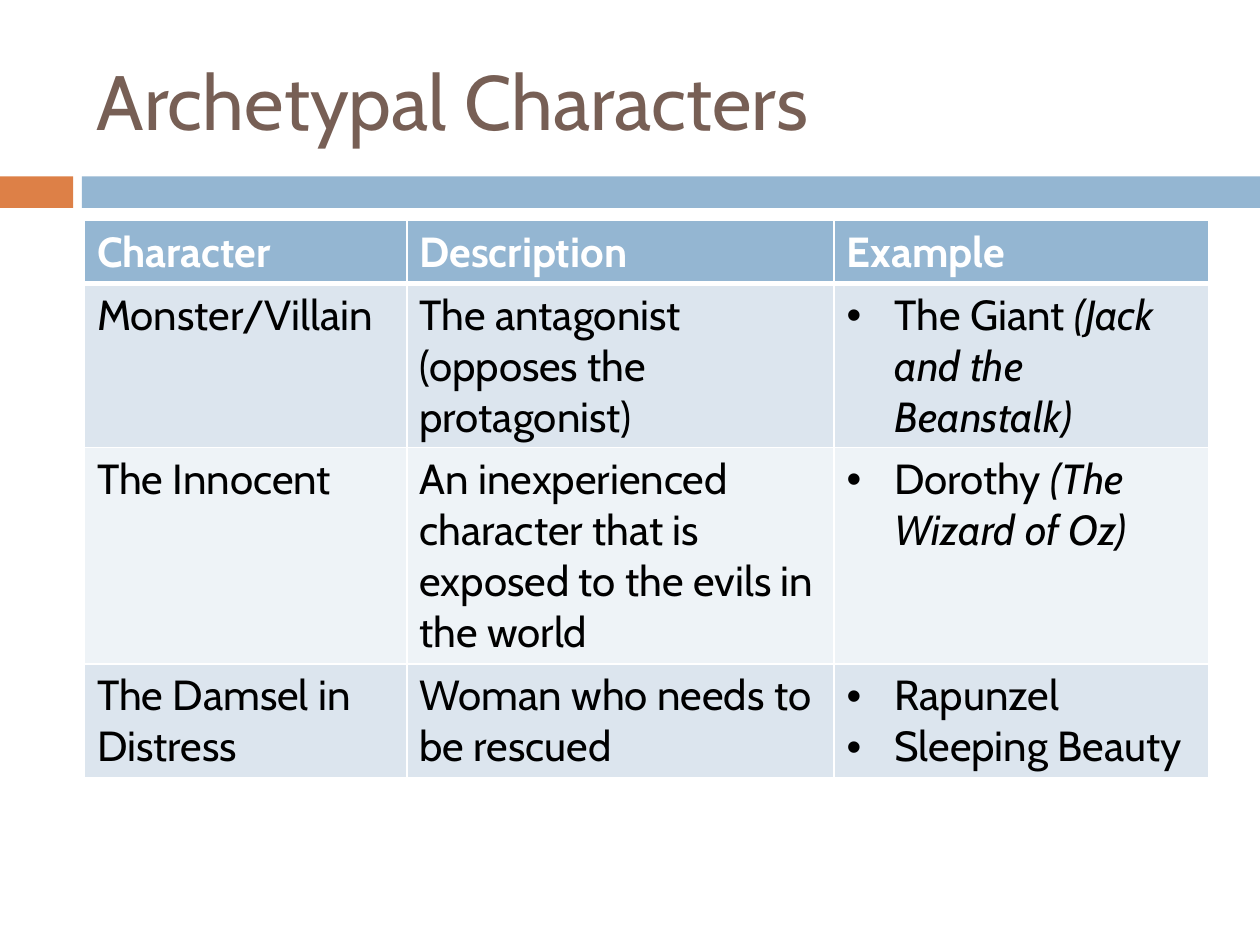
import pptx
import pptx.util
import pptx.dml.color
import pptx.enum.shapes
import pptx.enum.text
import pptx.oxml
import pptx.oxml.ns
from pptx.util import Inches

FONT = "Cabin"
WHITE, BLACK, BROWN = "FFFFFF", "000000", "775F55"
ORANGE, BLUE = "DD8047", "94B6D2"
BANDS = ["DCE5EE", "EEF3F7"]
COLUMNS = [2.56, 3.39, 2.97]
ROW_HEIGHTS = [0.5, 1.3, 1.72, 0.9]
HEADERS = ["Character", "Description", "Example"]
CHARACTERS = [
    ("Monster/Villain", "The antagonist (opposes the protagonist)",
     [("The Giant ", "(Jack and the Beanstalk)")]),
    ("The Innocent",
     "An inexperienced character that is exposed to the evils in the world",
     [("Dorothy ", "(The Wizard of Oz)")]),
    ("The Damsel in Distress", "Woman who needs to be rescued",
     [("Rapunzel", ""), ("Sleeping Beauty", "")]),
]


def rgb(value):
    """Return the colour for a hex string."""
    return pptx.dml.color.RGBColor.from_string(value)


def add_text(p, text, size=24, color=BLACK, bold=False, italic=False):
    """Add a formatted run to a paragraph."""
    r = p.add_run()
    r.text = text
    r.font.name = FONT
    r.font.size = pptx.util.Pt(size)
    r.font.bold = bold
    r.font.italic = italic
    r.font.color.rgb = rgb(color)


def add_bullet(p):
    """Give a paragraph a round bullet with a hanging indent."""
    pPr = p._p.get_or_add_pPr()
    pPr.set("marL", str(Inches(0.38)))
    pPr.set("indent", str(-Inches(0.38)))
    ns = pptx.oxml.ns.nsdecls("a")
    pPr.append(pptx.oxml.parse_xml(f'<a:buFont {ns} typeface="Arial"/>'))
    pPr.append(pptx.oxml.parse_xml(f'<a:buChar {ns} char="•"/>'))


def style_cell(cell, fill, top=1, bottom=1):
    """Set the white borders and the fill of a cell."""
    tcPr = cell._tc.get_or_add_tcPr()
    for side, width in (("L", 1), ("R", 1), ("T", top), ("B", bottom)):
        tcPr.append(pptx.oxml.parse_xml(
            f'<a:ln{side} {pptx.oxml.ns.nsdecls("a")} w="{pptx.util.Pt(width)}">'
            f'<a:solidFill><a:srgbClr val="{WHITE}"/></a:solidFill></a:ln{side}>'))
    cell.fill.solid()
    cell.fill.fore_color.rgb = rgb(fill)


def add_title(s, x, y, w, h):
    """Place the slide title."""
    tf = s.shapes.add_textbox(Inches(x), Inches(y), Inches(w), Inches(h)).text_frame
    tf.word_wrap = True
    tf.vertical_anchor = pptx.enum.text.MSO_ANCHOR.MIDDLE
    add_text(tf.paragraphs[0], "Archetypal Characters", size=44, color=BROWN)


def add_band(s, x, y, w, h):
    """Place the orange block and the blue bar, split by a narrow gap."""
    block, gap = 0.58, 0.07
    bar = block + gap
    for left, width, color in ((x, block, ORANGE), (x + bar, w - bar, BLUE)):
        sp = s.shapes.add_shape(pptx.enum.shapes.MSO_SHAPE.RECTANGLE,
                                Inches(left), Inches(y), Inches(width), Inches(h))
        sp.shadow.inherit = False
        sp.fill.solid()
        sp.fill.fore_color.rgb = rgb(color)
        sp.line.fill.background()


def add_character_table(s, x, y, w, h):
    """Place the table of characters, descriptions and examples."""
    table = s.shapes.add_table(len(CHARACTERS) + 1, len(HEADERS), Inches(x),
                               Inches(y), Inches(w), Inches(h)).table
    for column, width in zip(table.columns, COLUMNS):
        column.width = Inches(w * width / sum(COLUMNS))
    for row, height in zip(table.rows, ROW_HEIGHTS):
        row.height = Inches(h * height / sum(ROW_HEIGHTS))
    for j, header in enumerate(HEADERS):
        cell = table.cell(0, j)
        style_cell(cell, BLUE, bottom=3)
        add_text(cell.text_frame.paragraphs[0], header, color=WHITE, bold=True)
    for i, (name, description, examples) in enumerate(CHARACTERS, 1):
        cells = table.rows[i].cells
        for cell in cells:
            style_cell(cell, BANDS[(i - 1) % 2], top=3 if i == 1 else 1)
        for j, text in enumerate((name, description)):
            add_text(cells[j].text_frame.paragraphs[0], text)
        tf = cells[2].text_frame
        for k, (figure, story) in enumerate(examples):
            p = tf.add_paragraph() if k else tf.paragraphs[0]
            add_bullet(p)
            add_text(p, figure)
            if story:
                add_text(p, story, italic=True)


def main():
    """Build the slide and save it."""
    prs = pptx.Presentation()
    prs.slide_width, prs.slide_height = Inches(10), Inches(7.5)
    s = prs.slides.add_slide(prs.slide_layouts[6])
    add_band(s, 0, 1.4, 10, 0.25)
    add_title(s, 0.67, 0.25, 8.92, 1.08)
    add_character_table(s, 0.67, 1.75, sum(COLUMNS), sum(ROW_HEIGHTS))
    prs.save("out.pptx")


if __name__ == "__main__":
    main()
